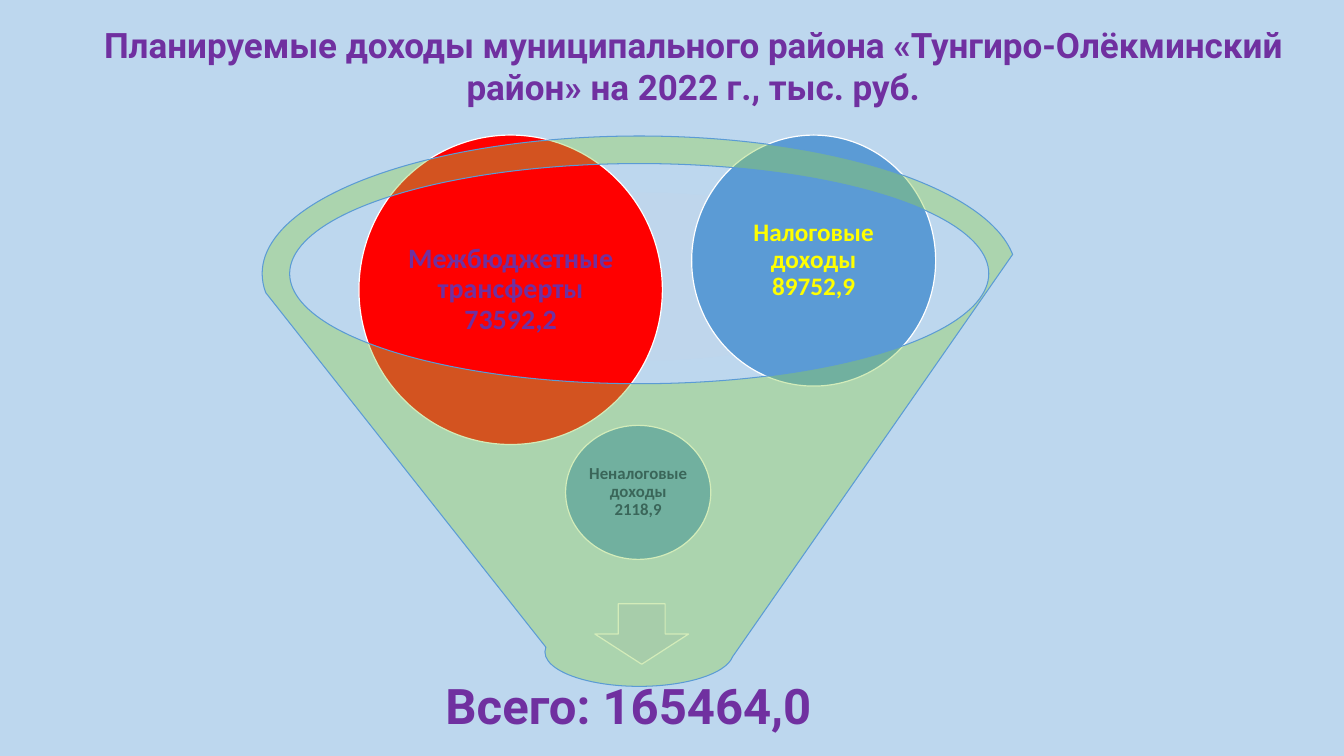
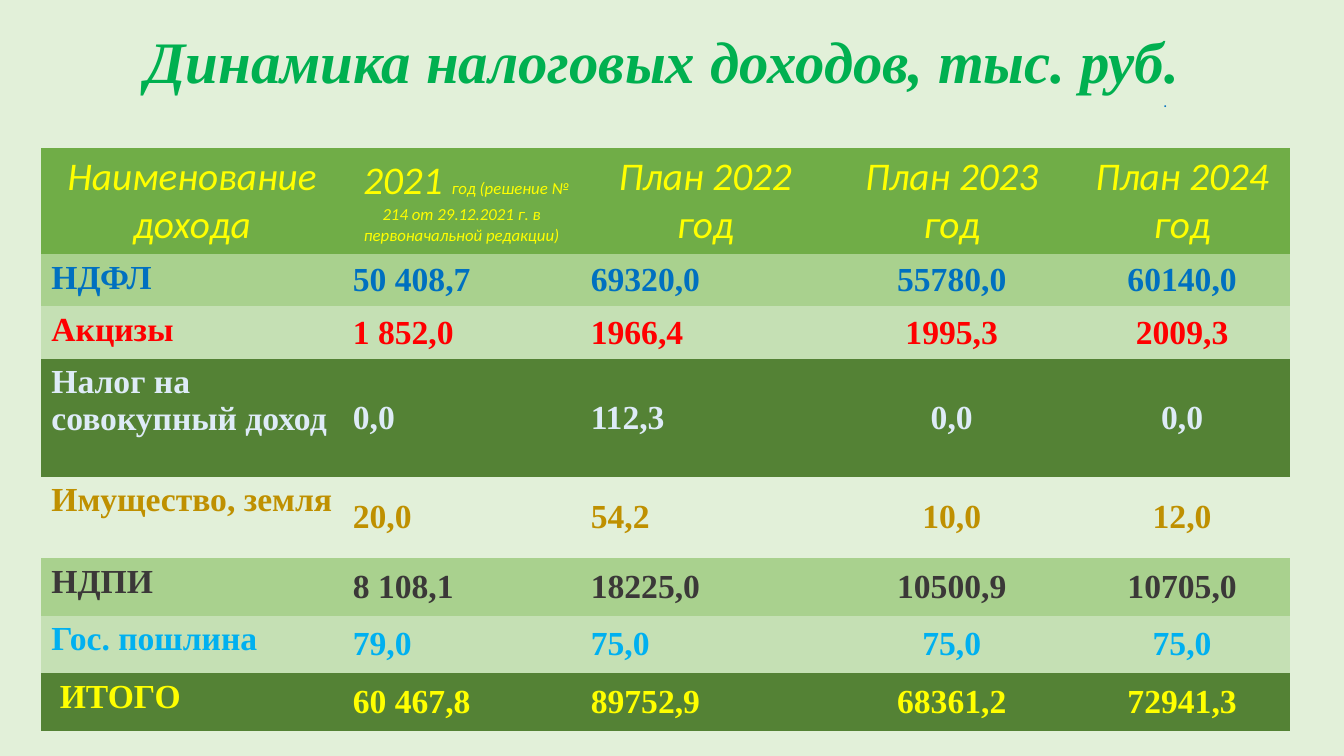
from dataclasses import dataclass

from lxml.etree import SubElement
from pptx import Presentation
from pptx.dml.color import RGBColor
from pptx.enum.shapes import MSO_SHAPE
from pptx.enum.text import MSO_ANCHOR, MSO_AUTO_SIZE, PP_ALIGN
from pptx.oxml.ns import qn
from pptx.util import Inches, Pt


@dataclass(frozen=True)
class Theme:
    sans: str = "Calibri"
    display: str = "Roboto"
    serif: str = "Times New Roman"
    sky: str = "BDD7EE"
    pale_green: str = "E2F0D9"
    light_green: str = "C5E0B4"
    soft_green: str = "A9D18E"
    green: str = "70AD47"
    dark_green: str = "548235"
    funnel: str = "92D050"
    title_green: str = "00B050"
    opening: str = "C4D5EB"
    arrow: str = "B5CBE7"
    blue: str = "5B9BD5"
    mid_blue: str = "0070C0"
    cyan: str = "00B0F0"
    ice: str = "DEEBF7"
    navy: str = "002060"
    purple: str = "7030A0"
    red: str = "FF0000"
    yellow: str = "FFFF00"
    gold: str = "BF9000"
    charcoal: str = "3B3838"
    white: str = "FFFFFF"
    title_size: float = 25
    big_title_size: float = 42
    total_size: float = 35
    header_size: float = 28
    body_size: float = 24
    note_size: float = 12
    dot_size: float = 9


T = Theme()
NO_GRID = "{2D5ABB26-0587-4C30-8999-92F81FD0307C}"

INCOMES = [
    ("Неналоговые доходы 2118,9", (5.61, 4.22, 1.44, 1.33), T.blue, T.navy, 12, 0.01),
    ("Межбюджетные трансферты 73592,2", (3.56, 1.34, 3.01, 3.07), T.red, T.purple, 20, 0.03),
    ("Налоговые доходы 89752,9", (6.86, 1.34, 2.42, 2.49), T.blue, T.yellow, 18, 0.03),
]

HEADERS = [
    [("Наименование дохода", T.header_size)],
    [(" 2021 ", T.header_size),
     ("год (решение № 214 от 29.12.2021 г. в первоначальной редакции)", T.note_size)],
    *([(f"План {year} год", T.header_size)] for year in (2022, 2023, 2024)),
]

TAXES = [
    (0.52, T.soft_green, T.mid_blue, ["НДФЛ", "50 408,7", "69320,0", "55780,0", "60140,0"]),
    (0.52, T.light_green, T.red, ["Акцизы", "1 852,0", "1966,4", "1995,3", "2009,3"]),
    (1.17, T.dark_green, T.ice, ["Налог на совокупный доход", "0,0", "112,3", "0,0", "0,0"]),
    (0.81, T.pale_green, T.gold, ["Имущество, земля", "20,0", "54,2", "10,0", "12,0"]),
    (0.57, T.soft_green, T.charcoal, ["НДПИ", "8 108,1", "18225,0", "10500,9", "10705,0"]),
    (0.57, T.light_green, T.cyan, ["Гос. пошлина", "79,0", "75,0", "75,0", "75,0"]),
    (0.57, T.dark_green, T.yellow, [" ИТОГО", "60 467,8", "89752,9", "68361,2", "72941,3"]),
]

COLUMN_WIDTHS = [2.99, 2.36, 2.47, 2.42, 2.15]
HEADER_HEIGHT = 1.04


def paint(fill, color):
    fill.solid()
    fill.fore_color.rgb = RGBColor.from_string(color)


def write(p, text, *, size, color, font=T.sans, bold=False, italic=False,
          align=PP_ALIGN.CENTER, spacing=None):
    p.alignment = align
    if spacing:
        p.line_spacing = spacing
    r = p.add_run()
    r.text = text
    r.font.name, r.font.size = font, Pt(size)
    r.font.bold, r.font.italic = bold, italic
    r.font.color.rgb = RGBColor.from_string(color)


def set_frame(tf, anchor=MSO_ANCHOR.MIDDLE, inset=None):
    tf.word_wrap = True
    tf.auto_size = MSO_AUTO_SIZE.NONE
    tf.vertical_anchor = anchor
    if inset is not None:
        tf.margin_left = tf.margin_right = Inches(inset)
        tf.margin_top = tf.margin_bottom = Inches(inset)


def add_slide(prs, background, title, box, **style):
    s = prs.slides.add_slide(prs.slide_layouts[5])
    paint(s.background.fill, background)
    sp = s.shapes.title
    sp.left, sp.top, sp.width, sp.height = map(Inches, box)
    set_frame(sp.text_frame, MSO_ANCHOR.TOP)
    write(sp.text_frame.paragraphs[0], title, bold=True, spacing=1.0, **style)
    return s


def add_figure(s, kind, box, fill, line=None, width=0.85, opacity=None):
    sp = s.shapes.add_shape(kind, *map(Inches, box))
    sp.shadow.inherit = False
    paint(sp.fill, fill)
    if opacity:
        color = sp.element.spPr.find(qn("a:solidFill")).find(qn("a:srgbClr"))
        SubElement(color, qn("a:alpha")).set("val", str(opacity * 1000))
    if line:
        paint(sp.line.fill, line)
        sp.line.width = Pt(width)
    else:
        sp.line.fill.background()
    return sp


def add_text(s, text, box, **style):
    sp = s.shapes.add_textbox(*map(Inches, box))
    set_frame(sp.text_frame, inset=0)
    write(sp.text_frame.paragraphs[0], text, **style)


def fill_cell(cell, runs, fill, anchor=MSO_ANCHOR.MIDDLE, **style):
    paint(cell.fill, fill)
    cell.vertical_anchor = anchor
    cell.margin_right = Inches(0.05 if anchor == MSO_ANCHOR.TOP else 0.1)
    for text, size in runs:
        write(cell.text_frame.paragraphs[0], text, size=size, **style)


def add_tax_table(s, left, top):
    heights = [HEADER_HEIGHT] + [row[0] for row in TAXES]
    frame = s.shapes.add_table(len(heights), len(COLUMN_WIDTHS), Inches(left), Inches(top),
                               Inches(sum(COLUMN_WIDTHS)), Inches(sum(heights)))
    table = frame.table
    table._tbl.tblPr.find(qn("a:tableStyleId")).text = NO_GRID
    table.horz_banding = False
    for column, width in zip(table.columns, COLUMN_WIDTHS):
        column.width = Inches(width)
    for row, height in zip(table.rows, heights):
        row.height = Inches(height)
    for i, runs in enumerate(HEADERS):
        fill_cell(table.cell(0, i), runs, T.green, color=T.yellow, italic=True)
    for j, (_, fill, color, values) in enumerate(TAXES, 1):
        for i, value in enumerate(values):
            fill_cell(table.cell(j, i), [(value, T.body_size)], fill,
                      anchor=MSO_ANCHOR.MIDDLE if i else MSO_ANCHOR.TOP,
                      color=color, font=T.serif, bold=True,
                      align=PP_ALIGN.LEFT if i < 3 else PP_ALIGN.CENTER)


def build_income_funnel(prs):
    s = add_slide(prs, T.sky,
                  "Планируемые доходы муниципального района «Тунгиро-Олёкминский район» "
                  "на 2022 г., тыс. руб.",
                  (0.42, 0.18, 12.91, 0.94),
                  size=T.title_size, color=T.purple, font=T.display)
    add_figure(s, MSO_SHAPE.OVAL, (3.95, 1.91, 4.8, 1.67), T.opening, opacity=40)
    add_figure(s, MSO_SHAPE.DOWN_ARROW, (5.9, 5.99, 0.93, 0.6), T.arrow, T.white)
    add_text(s, "Всего: 165464,0", (4, 6.57, 4.47, 0.92), size=T.total_size,
             color=T.purple, font=T.display, bold=True, spacing=0.9)
    for text, box, fill, color, size, inset in INCOMES:
        sp = add_figure(s, MSO_SHAPE.OVAL, box, fill, T.white)
        set_frame(sp.text_frame, inset=inset)
        write(sp.text_frame.paragraphs[0], text, size=size, color=color, bold=True, spacing=0.9)
    add_figure(s, MSO_SHAPE.FUNNEL, (2.6, 1.35, 7.48, 5.46), T.funnel, T.blue, 0.75, opacity=40)


def build_tax_dynamics(prs):
    s = add_slide(prs, T.pale_green, "Динамика налоговых доходов, тыс. руб.",
                  (0, 0.19, 13.14, 0.8),
                  size=T.big_title_size, color=T.title_green, font=T.serif, italic=True)
    add_text(s, ".", (11.46, 0.92, 0.2, 0.2), size=T.dot_size, color=T.mid_blue,
             bold=True, italic=True)
    add_tax_table(s, 0.41, 1.47)


def main():
    prs = Presentation()
    prs.slide_width, prs.slide_height = Inches(13.33), Inches(7.5)
    build_income_funnel(prs)
    build_tax_dynamics(prs)
    prs.save("out.pptx")


if __name__ == "__main__":
    main()
